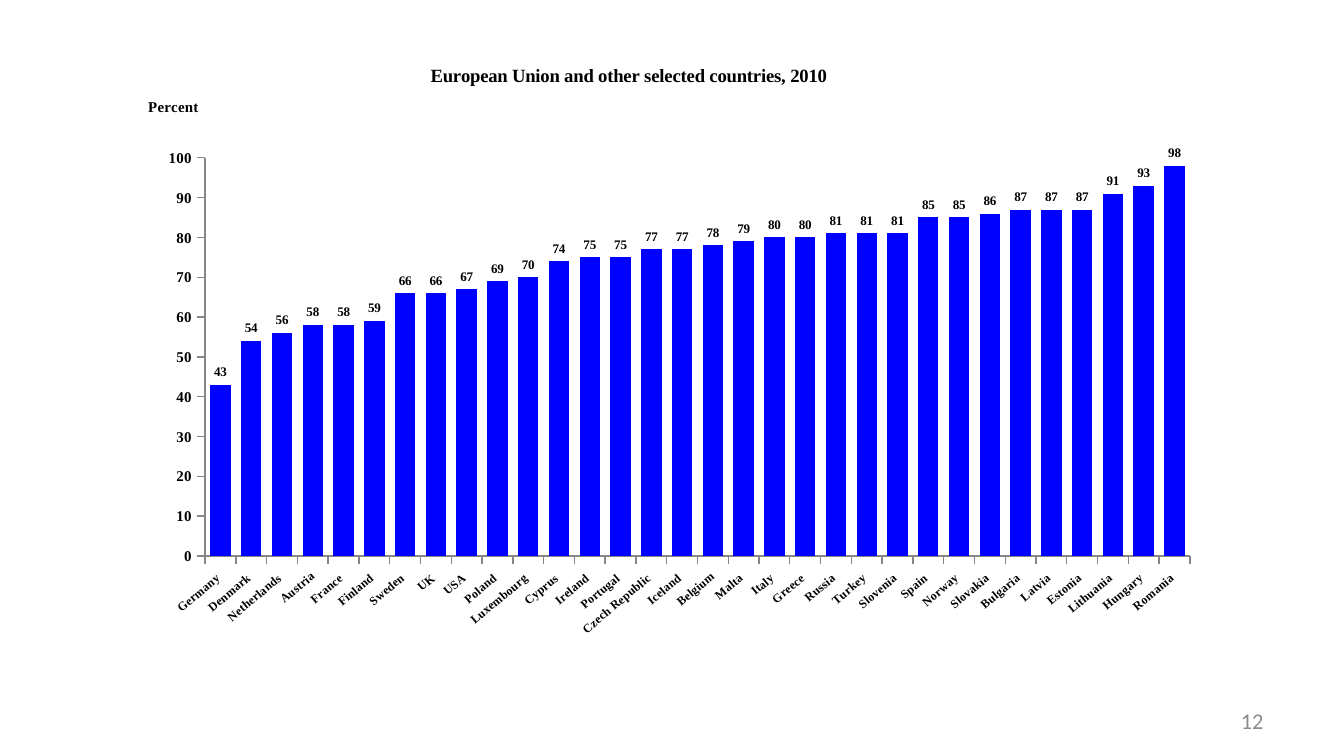
"""Build a slide with a column chart of percentages by country."""
from dataclasses import dataclass
from typing import Any

from lxml.etree import SubElement
from pptx import Presentation
from pptx.chart.data import CategoryChartData
from pptx.dml.color import RGBColor
from pptx.enum.chart import XL_CHART_TYPE as ChartType
from pptx.enum.chart import XL_LABEL_POSITION as LabelPosition
from pptx.enum.chart import XL_TICK_MARK as TickMark
from pptx.enum.text import MSO_ANCHOR as Anchor
from pptx.enum.text import PP_ALIGN as Align
from pptx.oxml import parse_xml
from pptx.oxml.ns import nsdecls, qn
from pptx.util import Cm, Pt

COLORS = {"text": "000000", "bar": "0000FF", "axis": "868686", "number": "8C8C8C"}

PERCENTAGES = {
    "Germany ": 43, "Denmark ": 54, "Netherlands ": 56, "Austria": 58,
    "France ": 58, "Finland ": 59, "Sweden ": 66, "UK ": 66,
    "USA ": 67, "Poland ": 69, "Luxembourg ": 70, "Cyprus ": 74,
    "Ireland ": 75, "Portugal ": 75, "Czech Republic ": 77, "Iceland ": 77,
    "Belgium": 78, "Malta ": 79, "Italy ": 80, "Greece ": 80,
    "Russia ": 81, "Turkey ": 81, "Slovenia ": 81, "Spain ": 85,
    "Norway ": 85, "Slovakia ": 86, "Bulgaria ": 87, "Latvia ": 87,
    "Estonia ": 87, "Lithuania ": 91, "Hungary ": 93, "Romania ": 98,
}


@dataclass
class SlideBuilder:
    """Hold the style and the current slide."""

    slide: Any
    chart_font: str = "Times New Roman"
    number_font: str = "Calibri"

    def style(self, font, size, color="text", name=None, bold=True):
        font.name = name or self.chart_font
        font.size = Pt(size)
        font.bold = bold
        font.color.rgb = RGBColor.from_string(COLORS[color])

    def place(self, element, index, **percents):
        for layout in element.findall(qn("c:layout")):
            element.remove(layout)
        layout = parse_xml(f"<c:layout {nsdecls('c')}><c:manualLayout/></c:layout>")
        if "w" in percents:
            SubElement(layout[0], qn("c:layoutTarget")).set("val", "inner")
        for side in "xy":
            SubElement(layout[0], qn(f"c:{side}Mode")).set("val", "edge")
        for side, percent in percents.items():
            SubElement(layout[0], qn(f"c:{side}")).set("val", f"{percent / 100:.4f}")
        element.insert(index, layout)

    def chart_title(self, title, text, size, x, y):
        frame = title.text_frame
        frame.text = text
        self.style(frame.paragraphs[0].font, size)
        self.place(frame._txBody.getparent().getparent(), 1, x=x, y=y)
        return frame

    def axis(self, axis, size):
        axis.has_major_gridlines = False
        axis.major_tick_mark = TickMark.OUTSIDE
        axis.minor_tick_mark = TickMark.NONE
        axis.format.line.color.rgb = RGBColor.from_string(COLORS["axis"])
        axis.format.line.width = Pt(0.75)
        self.style(axis.tick_labels.font, size)

    def column_chart(self, percentages, title, unit, left, top, width, height):
        chart_data = CategoryChartData(number_format="0")
        chart_data.categories = list(percentages)
        chart_data.add_series("Series 1", list(percentages.values()))
        chart = self.slide.shapes.add_chart(
            ChartType.COLUMN_CLUSTERED, Cm(left), Cm(top), Cm(width), Cm(height), chart_data
        ).chart
        self.style(chart.font, 10, bold=False)
        chart.has_legend = False
        self.chart_title(chart.chart_title, title, 10, 26.5, 0.2)

        countries, scale = chart.category_axis, chart.value_axis
        self.axis(countries, 6.5)
        countries._element.find(qn("c:txPr")).find(qn("a:bodyPr")).set("rot", "-2400000")
        self.axis(scale, 8)
        scale.minimum_scale, scale.maximum_scale, scale.major_unit = 0, 100, 10
        scale.tick_labels.number_format = "General"
        scale.tick_labels.number_format_is_linked = False
        unit_frame = self.chart_title(scale.axis_title, unit, 8, 0, 5.7)
        body = unit_frame._txBody.find(qn("a:bodyPr"))
        body.set("rot", "0")
        body.set("vert", "horz")

        columns = chart.plots[0]
        columns.gap_width = 51
        columns.vary_by_categories = False
        bars = columns.series[0].format
        bars.fill.solid()
        bars.fill.fore_color.rgb = RGBColor.from_string(COLORS["bar"])
        columns.has_data_labels = True
        labels = columns.data_labels
        labels.show_value = True
        labels.number_format = "0"
        labels.number_format_is_linked = False
        labels.position = LabelPosition.OUTSIDE_END
        self.style(labels.font, 7)
        plot_area = chart._chartSpace.chart.plotArea
        self.place(plot_area, 0, x=5.6, y=16.1, w=92.6, h=65)

    def page_number(self, number, left, top, width, height):
        frame = self.slide.shapes.add_textbox(
            Cm(left), Cm(top), Cm(width), Cm(height)
        ).text_frame
        frame.word_wrap = True
        frame.vertical_anchor = Anchor.MIDDLE
        frame.text = number
        paragraph = frame.paragraphs[0]
        paragraph.alignment = Align.RIGHT
        self.style(paragraph.font, 12, "number", self.number_font, bold=False)


def main():
    deck = Presentation()
    deck.slide_width, deck.slide_height = Cm(25.4), Cm(14.29)
    builder = SlideBuilder(deck.slides.add_slide(deck.slide_layouts[6]))
    builder.page_number("12", 18.2, 13.24, 5.93, 0.76)
    builder.column_chart(
        PERCENTAGES, "European Union and other selected countries, 2010", "Percent",
        2.75, 1.12, 20.1, 11.58,
    )
    deck.save("out.pptx")


if __name__ == "__main__":
    main()
